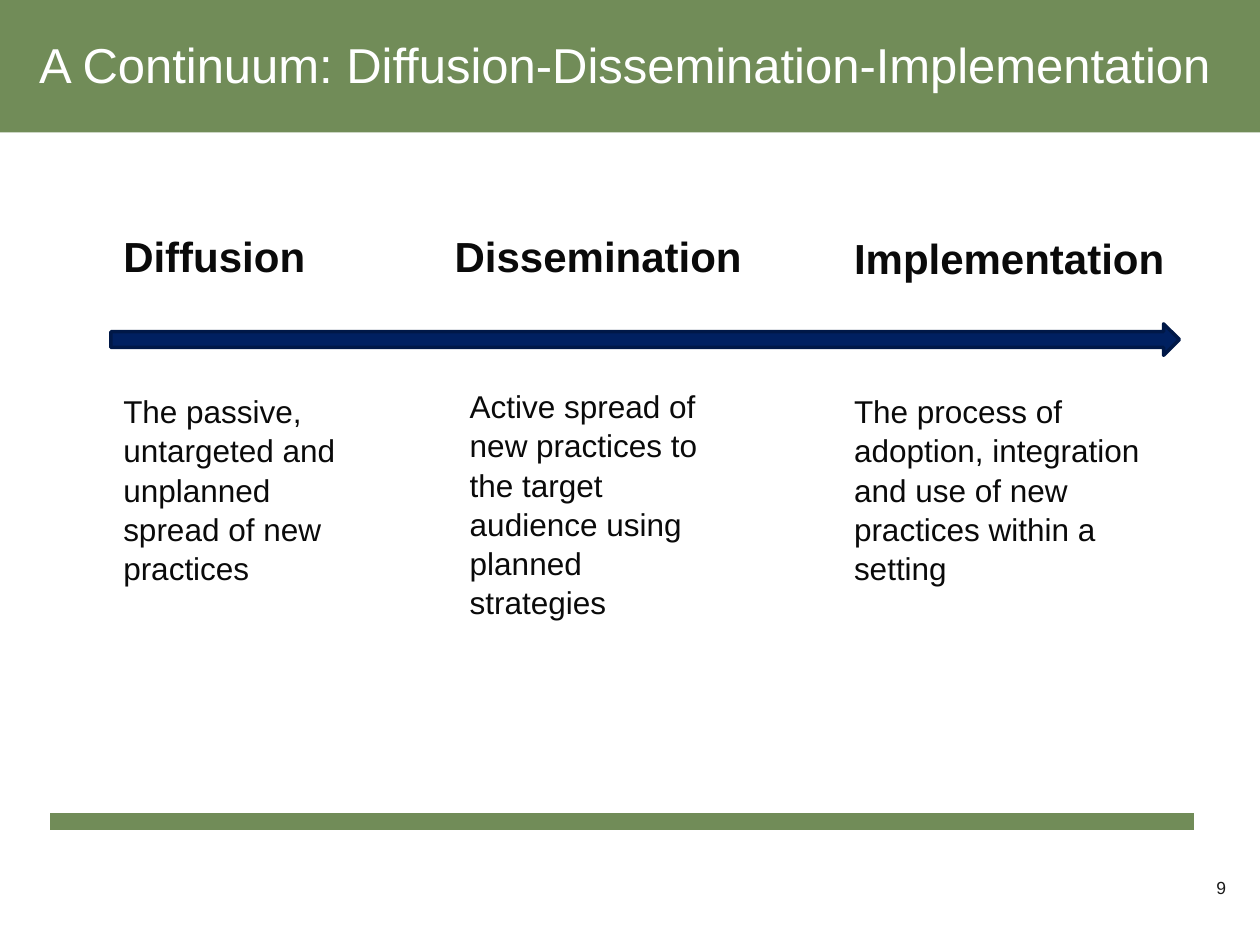
import pptx
import pptx.dml.color
import pptx.enum.shapes
import pptx.enum.text
import pptx.oxml.ns
import pptx.util
from lxml import etree
from pptx.util import Inches

GREEN, NAVY, NAVY_EDGE = "718C58", "002060", "001847"
WHITE, INK, NUMBER_GRAY = "FFFFFF", "0A0A0A", "1A1A1A"

# stage, heading (left, top, width), description, description (left, top, width, height)
STAGES = [
    ("Diffusion", (0.88, 1.78, 1.75),
     "The passive, untargeted and unplanned spread of new practices",
     (0.88, 3.05, 1.92, 1.62)),
    ("Dissemination", (3.51, 1.78, 2.57),
     "Active spread of new practices to the target audience using planned strategies",
     (3.63, 3.01, 2.17, 1.92)),
    ("Implementation", (6.68, 1.8, 2.67),
     "The process of adoption, integration and use of new practices within a setting",
     (6.68, 3.05, 2.5, 1.62)),
]


def rgb(hex_color):
    return pptx.dml.color.RGBColor.from_string(hex_color)


def write(frame, text, size, color, bold=False):
    frame.text = text
    frame.vertical_anchor = pptx.enum.text.MSO_ANCHOR.TOP
    paragraph = frame.paragraphs[0]
    paragraph.alignment = pptx.enum.text.PP_ALIGN.LEFT
    font = paragraph.font
    font.name, font.size, font.bold = "Arial", pptx.util.Pt(size), bold
    font.color.rgb = rgb(color)
    return paragraph


def add_text(slide, box, text, size, color, bold=False, wrap=True):
    frame = slide.shapes.add_textbox(*map(Inches, box)).text_frame
    frame.word_wrap = wrap
    return write(frame, text, size, color, bold)


def add_filled(slide, preset, box, fill):
    shape = slide.shapes.add_shape(preset, *map(Inches, box))
    shape.shadow.inherit = False
    shape.fill.solid()
    shape.fill.fore_color.rgb = rgb(fill)
    shape.line.fill.background()
    return shape


def add_footer(slide):
    rule = slide.shapes.add_connector(
        pptx.enum.shapes.MSO_CONNECTOR.STRAIGHT,
        Inches(0.4), Inches(6.52), Inches(9.48), Inches(6.52))
    rule.line.color.rgb = rgb(GREEN)
    rule.line.width = pptx.util.Pt(10)
    etree.SubElement(rule._element.spPr, pptx.oxml.ns.qn("a:effectLst"))

    box = slide.shapes.add_textbox(*map(Inches, (9.55, 6.96, 0.18, 0.22)))
    frame = box.text_frame
    frame.margin_left = frame.margin_right = 0
    frame.margin_top = frame.margin_bottom = 0
    number = write(frame, "9", 10, NUMBER_GRAY)
    number.alignment = pptx.enum.text.PP_ALIGN.RIGHT


def add_title(slide):
    band = add_filled(slide, pptx.enum.shapes.MSO_SHAPE.RECTANGLE,
                      (0, -0.04, 10, 1.09), GREEN)
    title = slide.shapes.title
    title._element.addprevious(band._element)  # keep the band behind the title
    title.left, title.top, title.width, title.height = map(
        Inches, (0.31, 0.22, 9.61, 1.03))
    frame = title.text_frame
    frame.margin_left = frame.margin_right = 0
    write(frame, "A Continuum: Diffusion-Dissemination-Implementation", 28, WHITE)


def add_continuum(slide):
    for stage, (left, top, width), _, _ in STAGES:
        add_text(slide, (left, top, width, 0.5), stage, 24, INK, bold=True, wrap=False)

    arrow = add_filled(slide, pptx.enum.shapes.MSO_SHAPE.RIGHT_ARROW,
                       (0.88, 2.57, 8.48, 0.25), NAVY)
    arrow.line.color.rgb = rgb(NAVY_EDGE)
    arrow.line.width = pptx.util.Pt(2)

    for _, _, description, box in STAGES:
        add_text(slide, box, description, 18, INK).line_spacing = 1.04


def main():
    deck = pptx.Presentation()
    deck.slide_width, deck.slide_height = Inches(10), Inches(7.5)
    slide = deck.slides.add_slide(deck.slide_layouts[5])
    add_footer(slide)
    add_title(slide)
    add_continuum(slide)
    deck.save("out.pptx")


if __name__ == "__main__":
    main()
